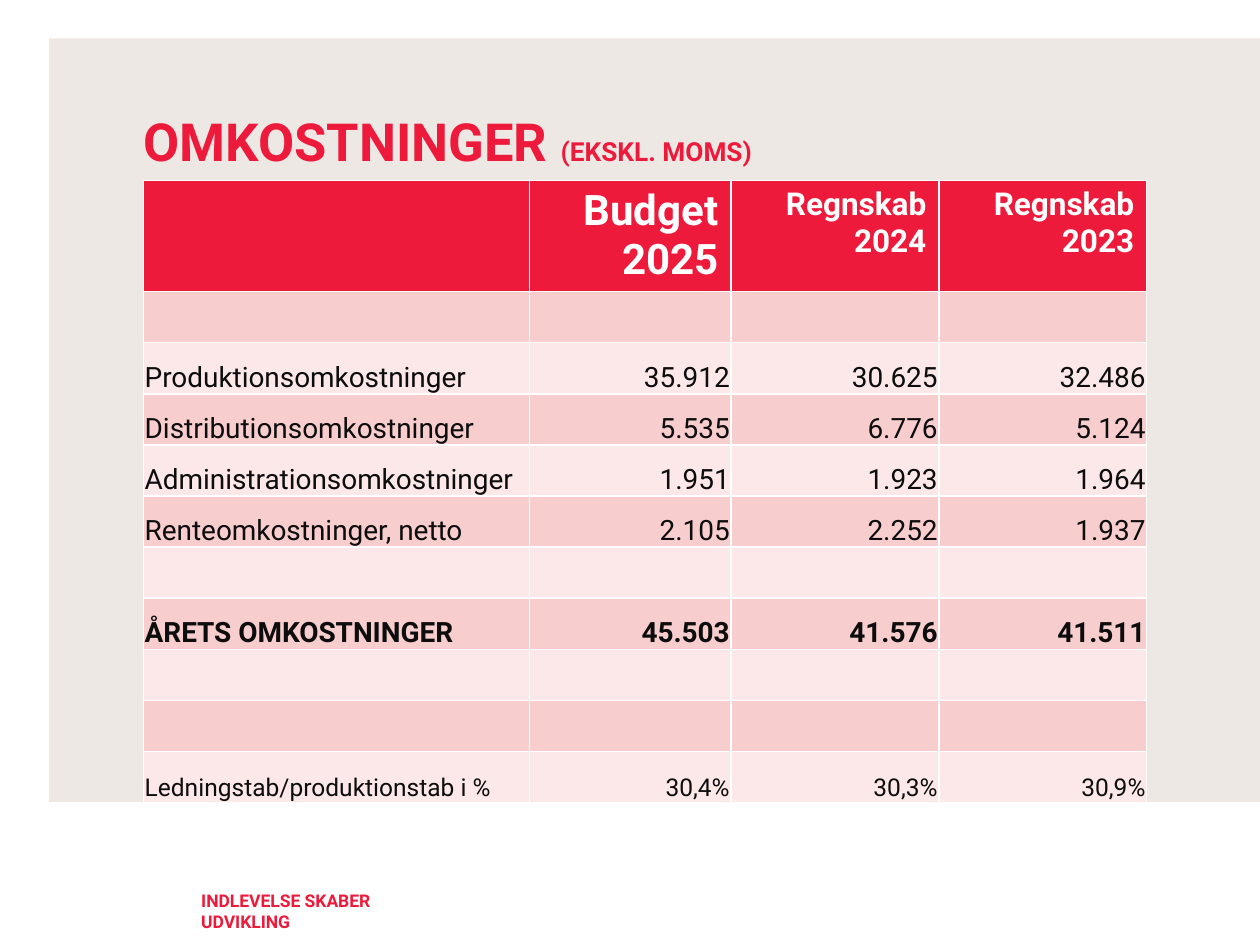
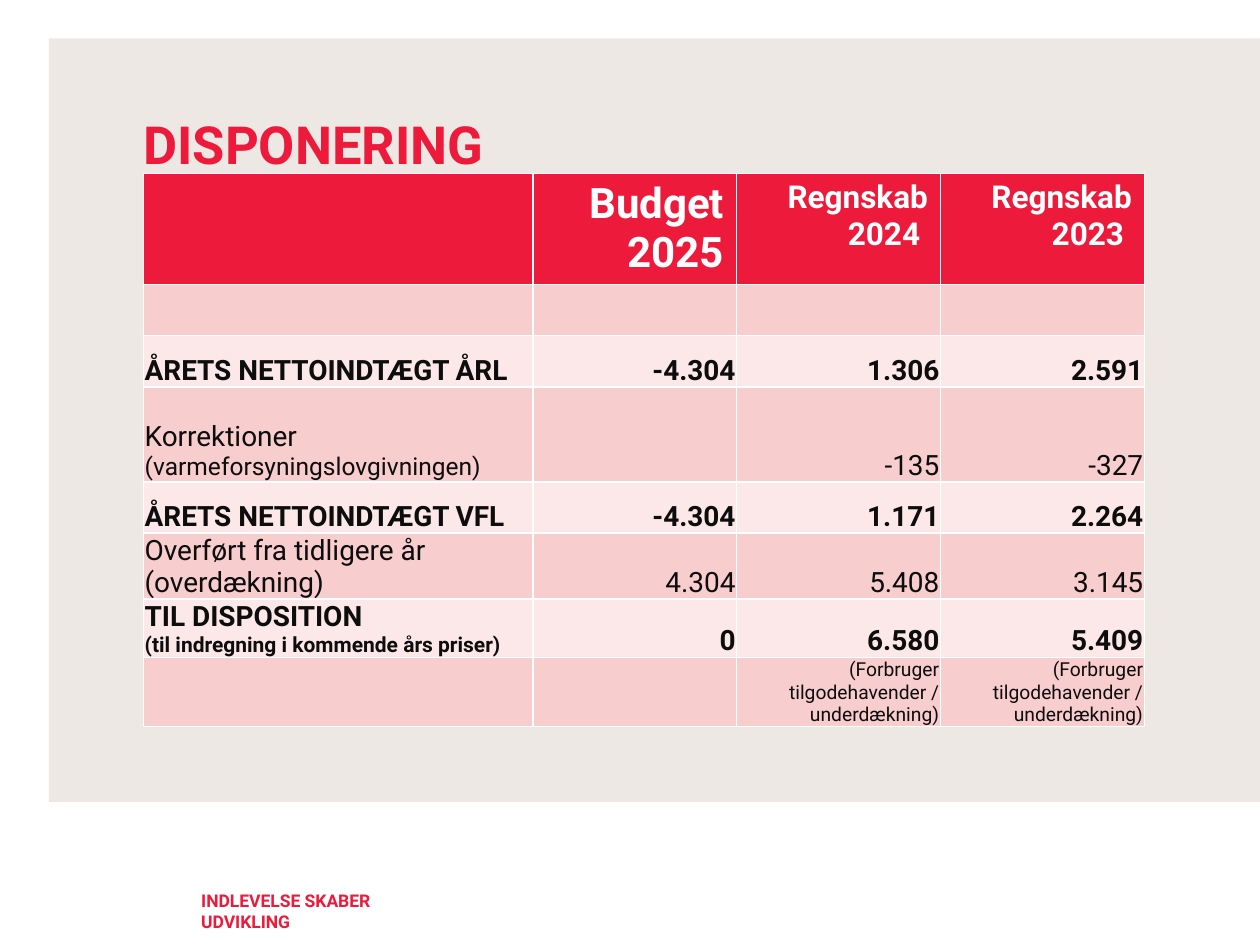
import pptx
import pptx.util
import pptx.dml.color
import pptx.enum.shapes
import pptx.enum.text
from dataclasses import dataclass

Pt = pptx.util.Pt
RGB = pptx.dml.color.RGBColor.from_string
ANCHOR = pptx.enum.text.MSO_ANCHOR
ALIGN = pptx.enum.text.PP_ALIGN


# Theme
@dataclass(frozen=True)
class Theme:
    font: str = "Roboto"
    red: str = "ED1A3B"
    sand: str = "EEE8E5"
    white: str = "FFFFFF"
    ink: str = "0D0D0D"
    stripes: tuple = ("F8CDCE", "FCE8E8")
    title: int = 30
    subtitle: int = 15
    budget: int = 24
    account: int = 18
    body: int = 16
    detail: int = 14
    small: int = 12
    note: int = 11
    footer: int = 10


T = Theme()

# Content: a row is (height, size, bold, cells);
# a cell is plain text or a list of paragraphs, each a list of (text, size)
FOOTER = "INDLEVELSE SKABER UDVIKLING"
ROW = 29.2
BLANK = (ROW, T.body, False, ("", "", "", ""))
CONSUMER_NOTE = "(Forbruger tilgodehavender / underdækning)"

SLIDES = [
    dict(
        title=[("OMKOSTNINGER ", T.title), ("(EKSKL. MOMS)", T.subtitle)],
        title_top=60.5,
        table_top=103,
        cols=(220.5, 115.2, 118.8, 118.8),
        header=("", "Budget 2025", "Regnskab 2024", "Regnskab 2023"),
        rows=[
            BLANK,
            (ROW, T.body, False, ("Produktionsomkostninger", "35.912", "30.625", "32.486")),
            (ROW, T.body, False, ("Distributionsomkostninger", "5.535", "6.776", "5.124")),
            (ROW, T.body, False, ("Administrationsomkostninger", "1.951", "1.923", "1.964")),
            (ROW, T.body, False, ("Renteomkostninger, netto", "2.105", "2.252", "1.937")),
            BLANK,
            (ROW, T.body, True, ("ÅRETS OMKOSTNINGER", "45.503", "41.576", "41.511")),
            BLANK,
            BLANK,
            (ROW, T.detail, False, ("Ledningstab/produktionstab i %", "30,4%", "30,3%", "30,9%")),
        ],
    ),
    dict(
        title=[("DISPONERING", T.title)],
        title_top=62,
        table_top=99,
        cols=(222.5, 116.5, 116.5, 116.5),
        header=("", "Budget 2025", "Regnskab 2024 ", "Regnskab 2023 "),
        rows=[
            BLANK,
            (ROW, T.body, True, ("ÅRETS NETTOINDTÆGT ÅRL", "-4.304", "1.306", "2.591")),
            (54.3, T.body, False, (
                [[("Korrektioner ", T.body), ("(varmeforsyningslovgivningen)", T.detail)]],
                "", "-135", "-327")),
            (ROW, T.body, True, ("ÅRETS NETTOINDTÆGT VFL", "-4.304", "1.171", "2.264")),
            (37.7, T.body, False, (
                "Overført fra tidligere år (overdækning)", "4.304", "5.408", "3.145")),
            (33.1, T.body, True, (
                [[("TIL DISPOSITION", T.body)],
                 [("(til indregning i kommende års priser)", T.small)]],
                "0", "6.580", "5.409")),
            (39.4, T.note, False, ("", "", CONSUMER_NOTE, CONSUMER_NOTE)),
        ],
    ),
]

# Layout
LEFT = 82
HEADER_HEIGHT = 63.4


def add_run(p, text, size, color, bold):
    r = p.add_run()
    r.text = text
    r.font.name, r.font.size, r.font.bold = T.font, Pt(size), bold
    r.font.color.rgb = RGB(color)


def bare_frame(shape):
    tf = shape.text_frame
    tf.word_wrap = True
    tf.auto_size = pptx.enum.text.MSO_AUTO_SIZE.NONE
    tf.vertical_anchor = ANCHOR.TOP
    tf.margin_left = tf.margin_top = tf.margin_right = tf.margin_bottom = 0
    return tf


def add_frame(s):
    """Sand band behind everything, and the footer line."""
    band = s.shapes.add_shape(pptx.enum.shapes.MSO_SHAPE.RECTANGLE,
                              Pt(28), Pt(22), Pt(692), Pt(436.3))
    band.shadow.inherit = False
    band.fill.solid()
    band.fill.fore_color.rgb = RGB(T.sand)
    band.line.fill.background()
    s.shapes._spTree.insert(2, band._element)

    footer = s.shapes.add_textbox(Pt(115), Pt(508.3), Pt(148.3), Pt(12.2))
    add_run(bare_frame(footer).paragraphs[0], FOOTER, T.footer, T.red, True)


def set_title(s, runs, top):
    title = s.shapes.title
    title.left, title.top, title.width, title.height = Pt(LEFT), Pt(top), Pt(612.7), Pt(74)
    tf = bare_frame(title)
    tf.margin_top = Pt(2)
    p = tf.paragraphs[0]
    p.alignment = ALIGN.LEFT
    for text, size in runs:
        add_run(p, text, size, T.red, True)


def fill_cell(cell, content, col, size, fill, color, bold):
    cell.fill.solid()
    cell.fill.fore_color.rgb = RGB(fill)
    if isinstance(content, str):
        content = [[(content, size)]] if content else [[]]
    tf = cell.text_frame
    for i, runs in enumerate(content):
        p = tf.add_paragraph() if i else tf.paragraphs[0]
        p.alignment = ALIGN.RIGHT if col else ALIGN.LEFT
        for text, run_size in runs:
            add_run(p, text, run_size, color, bold)


def add_cost_table(s, top, cols, header, rows):
    heights = [HEADER_HEIGHT] + [row[0] for row in rows]
    tbl = s.shapes.add_table(len(heights), len(cols), Pt(LEFT), Pt(top),
                             Pt(sum(cols)), Pt(sum(heights))).table
    for column, width in zip(tbl.columns, cols):
        column.width = Pt(width)
    for row, height in zip(tbl.rows, heights):
        row.height = Pt(height)

    for c, text in enumerate(header):
        size = T.budget if c == 1 else T.account
        fill_cell(tbl.cell(0, c), text, c, size, T.red, T.white, True)

    for i, (_, size, bold, cells) in enumerate(rows):
        for c, content in enumerate(cells):
            cell = tbl.cell(i + 1, c)
            cell.margin_left = cell.margin_right = cell.margin_top = Pt(0.7)
            cell.margin_bottom = 0
            cell.vertical_anchor = ANCHOR.BOTTOM
            fill_cell(cell, content, c, size, T.stripes[i % 2], T.ink, bold)


def main():
    prs = pptx.Presentation()
    prs.slide_width, prs.slide_height = Pt(720), Pt(540)
    for data in SLIDES:
        s = prs.slides.add_slide(prs.slide_layouts[5])
        add_frame(s)
        set_title(s, data["title"], data["title_top"])
        add_cost_table(s, data["table_top"], data["cols"], data["header"], data["rows"])
    prs.save("out.pptx")


if __name__ == "__main__":
    main()
